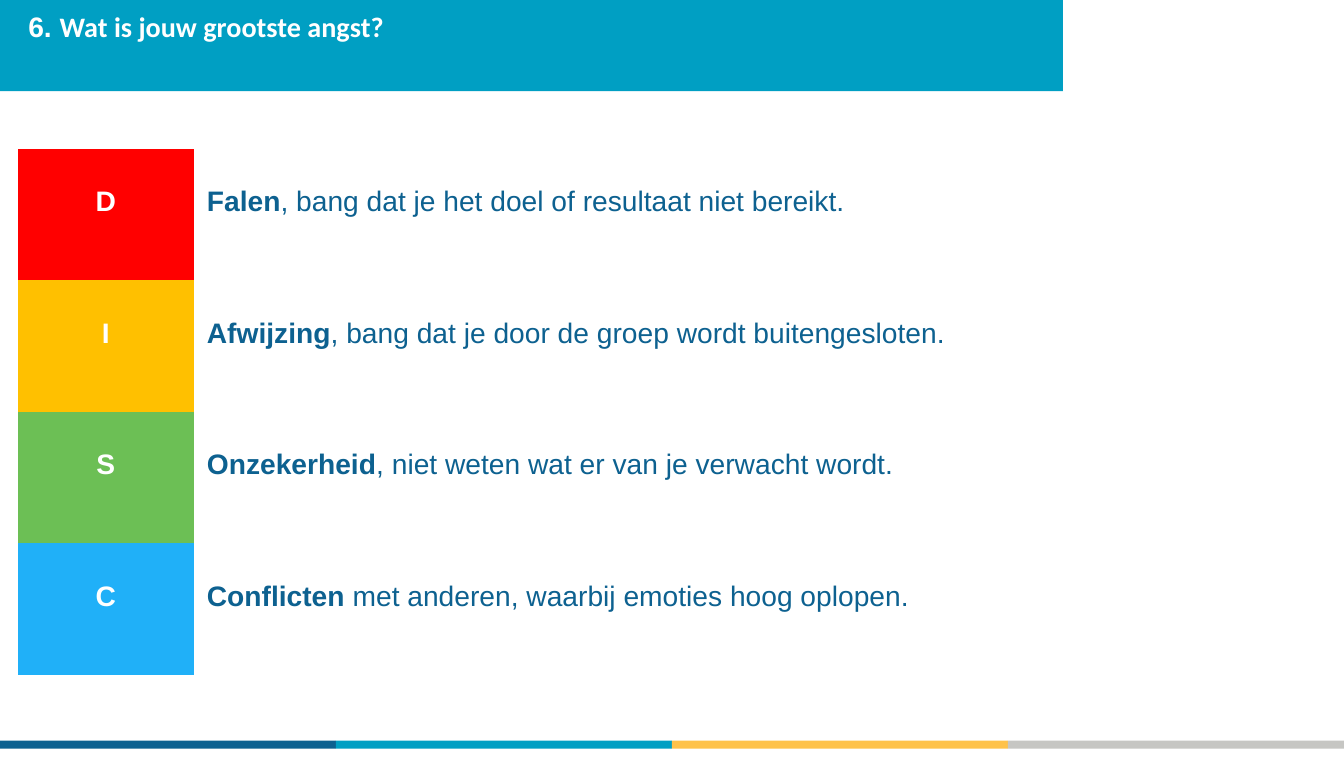
import pptx
import pptx.util
import pptx.dml.color
import pptx.enum.shapes
import pptx.enum.text
from dataclasses import dataclass

Pt = pptx.util.Pt
Align = pptx.enum.text.PP_ALIGN
Anchor = pptx.enum.text.MSO_ANCHOR


@dataclass(frozen=True)
class Theme:
    navy: str = "0D6190"
    teal: str = "009FC3"
    gold: str = "FEC24A"
    gray: str = "C6C6C3"
    white: str = "FFFFFF"
    red: str = "FF0000"
    amber: str = "FFC000"
    green: str = "6CBF55"
    sky: str = "20B0F8"
    body: str = "Arial"
    head: str = "Calibri"
    size: int = 20


THEME = Theme()
NO_GRID = "{2D5ABB26-0587-4C30-8999-92F81FD0307C}"
FEARS = [
    ("D", THEME.red, "Falen", ", bang dat je het doel of resultaat niet bereikt."),
    ("I", THEME.amber, "Afwijzing", ", bang dat je door de groep wordt buitengesloten."),
    ("S", THEME.green, "Onzekerheid", ", niet weten wat er van je verwacht wordt."),
    ("C", THEME.sky, "Conflicten", " met anderen, waarbij emoties hoog oplopen."),
]


def paint(fill, color):
    fill.solid()
    fill.fore_color.rgb = pptx.dml.color.RGBColor.from_string(color)


def add_run(para, text, color, bold=True, face=THEME.body):
    run = para.add_run()
    run.text = text
    font = run.font
    font.name, font.size, font.bold = face, Pt(THEME.size), bold
    font.color.rgb = pptx.dml.color.RGBColor.from_string(color)


def add_bar(slide, box, color):
    kind = pptx.enum.shapes.MSO_SHAPE.RECTANGLE
    bar = slide.shapes.add_shape(kind, *map(Pt, box))
    bar.shadow.inherit = False
    paint(bar.fill, color)
    bar.line.fill.background()


def add_strip(slide, box):
    left, top, width, height = box
    colors = [THEME.navy, THEME.teal, THEME.gold, THEME.gray]
    step = width / len(colors)
    for i, color in enumerate(colors):
        add_bar(slide, (left + i * step, top, step, height), color)


def add_header(slide, box):
    left, top, width, height = box
    add_bar(slide, box, THEME.teal)
    title = slide.shapes.add_textbox(
        Pt(left + 13), Pt(top + 8.6), Pt(width - 36), Pt(44))
    frame = title.text_frame
    frame.word_wrap = True
    frame.vertical_anchor = Anchor.MIDDLE
    frame.margin_top, frame.margin_bottom = Pt(0), Pt(24)
    para = frame.paragraphs[0]
    add_run(para, "6. ", THEME.white)
    add_run(para, "Wat is jouw grootste angst?", THEME.white, face=THEME.head)


def add_fears(slide, box):
    left, top, width, height = box
    frame = slide.shapes.add_table(len(FEARS), 2, *map(Pt, box))
    table = frame.table
    table.first_row = table.horz_banding = False
    table._tbl.tblPr.find(pptx.oxml.ns.qn("a:tableStyleId")).text = NO_GRID
    table.columns[0].width = Pt(124.8)
    table.columns[1].width = Pt(width - 124.8)
    for i, (letter, color, fear, detail) in enumerate(FEARS):
        table.rows[i].height = Pt(height / len(FEARS))
        key, note = table.cell(i, 0), table.cell(i, 1)
        for cell in (key, note):
            cell.margin_left = cell.margin_right = Pt(9.4)
            cell.margin_top, cell.margin_bottom = Pt(26.6), Pt(3.6)
            cell.vertical_anchor = Anchor.TOP
        paint(key.fill, color)
        note.fill.background()
        para = key.text_frame.paragraphs[0]
        para.alignment = Align.CENTER
        add_run(para, letter, THEME.white)
        para = note.text_frame.paragraphs[0]
        add_run(para, fear, THEME.navy)
        add_run(para, detail, THEME.navy, bold=False)


def main():
    deck = pptx.Presentation()
    deck.slide_width, deck.slide_height = Pt(954.7), Pt(540)
    slide = deck.slides.add_slide(deck.slide_layouts[6])
    add_strip(slide, (0, 526.2, 954.7, 5.8))
    add_header(slide, (0, 0, 755, 64.8))
    add_fears(slide, (12.8, 105.8, 895, 373.6))
    deck.save("out.pptx")


if __name__ == "__main__":
    main()
